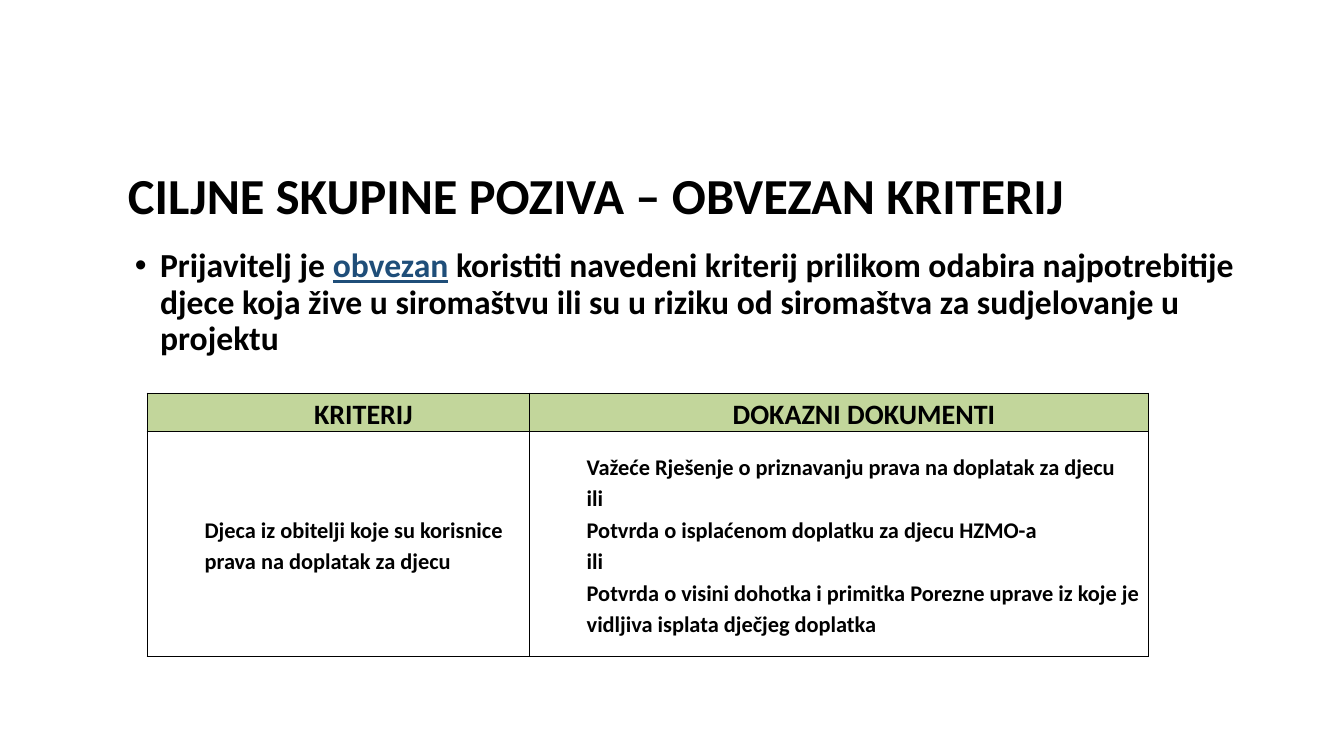
from dataclasses import dataclass

from lxml.etree import SubElement
from pptx import Presentation
from pptx.dml.color import RGBColor
from pptx.enum.shapes import MSO_SHAPE
from pptx.enum.text import MSO_ANCHOR, PP_ALIGN
from pptx.oxml.ns import qn
from pptx.util import Inches, Pt

BLACK = RGBColor(0x00, 0x00, 0x00)
WHITE = RGBColor(0xFF, 0xFF, 0xFF)
BLUE = RGBColor(0x1F, 0x4E, 0x79)
GREEN = RGBColor(0xC2, 0xD6, 0x9B)
FONT = "Calibri"


@dataclass
class Run:
    text: str
    color: RGBColor = BLACK
    underline: bool = False


@dataclass
class Row:
    height: float
    cells: list[list[str]]
    size: float
    align: PP_ALIGN
    anchor: MSO_ANCHOR
    fill: RGBColor | None = None


TITLE = "CILJNE SKUPINE POZIVA – OBVEZAN KRITERIJ "
REQUIREMENT = [
    Run("Prijavitelj je "),
    Run("obvezan", BLUE, True),
    Run(" koristiti navedeni kriterij prilikom odabira najpotrebitije djece "
        "koja žive u siromaštvu ili su u riziku od siromaštva za sudjelovanje u projektu"),
]
COLUMN_WIDTHS = [3.79, 6.14]
ROWS = [
    Row(0.38, [["KRITERIJ"], ["DOKAZNI DOKUMENTI"]],
        20, PP_ALIGN.CENTER, MSO_ANCHOR.TOP, GREEN),
    Row(2.23, [
        ["Djeca iz obitelji koje su korisnice prava na doplatak za djecu"],
        ["Važeće Rješenje o priznavanju prava na doplatak za djecu",
         "ili",
         "Potvrda o isplaćenom doplatku za djecu HZMO-a",
         "ili",
         "Potvrda o visini dohotka i primitka Porezne uprave iz koje je "
         "vidljiva isplata dječjeg doplatka"],
    ], 16, PP_ALIGN.LEFT, MSO_ANCHOR.MIDDLE),
]


def write_text(text_frame, paragraphs: list[list[Run]], *, size: float,
               align: PP_ALIGN = PP_ALIGN.LEFT, line_spacing: float = 0.9,
               margin: float = 0, indent: float = 0, bullet: str = "") -> None:
    text_frame.word_wrap = True
    for index, runs in enumerate(paragraphs):
        paragraph = text_frame.paragraphs[0] if index == 0 else text_frame.add_paragraph()
        paragraph.alignment = align
        paragraph.line_spacing = line_spacing
        properties = paragraph._p.get_or_add_pPr()
        properties.set("marL", str(Inches(margin)))
        properties.set("indent", str(Inches(indent)))
        if bullet:
            SubElement(properties, qn("a:buFont"), typeface="Arial")
            SubElement(properties, qn("a:buChar"), char=bullet)
        for item in runs:
            run = paragraph.add_run()
            run.text = item.text
            run.font.name = FONT
            run.font.size = Pt(size)
            run.font.bold = True
            run.font.underline = item.underline
            run.font.color.rgb = item.color


def add_title(slide) -> None:
    box = slide.shapes.add_textbox(Inches(0.22), Inches(0.97), Inches(11.5), Inches(1.45))
    box.text_frame.vertical_anchor = MSO_ANCHOR.BOTTOM
    box.text_frame.margin_bottom = Inches(0.18)
    write_text(box.text_frame, [[Run(TITLE)]], size=36, align=PP_ALIGN.CENTER)


def add_borders(cell) -> None:
    properties = cell._tc.get_or_add_tcPr()
    for side in ("lnL", "lnR", "lnT", "lnB"):
        line = SubElement(properties, qn(f"a:{side}"), w=str(Pt(1)))
        fill = SubElement(line, qn("a:solidFill"))
        SubElement(fill, qn("a:srgbClr"), val=str(BLACK))


def add_criteria_table(slide) -> None:
    table = slide.shapes.add_table(
        len(ROWS), len(COLUMN_WIDTHS), Inches(1.46), Inches(3.9),
        Inches(sum(COLUMN_WIDTHS)), Inches(sum(row.height for row in ROWS))).table
    for column, width in zip(table.columns, COLUMN_WIDTHS):
        column.width = Inches(width)
    for row_index, row in enumerate(ROWS):
        table.rows[row_index].height = Inches(row.height)
        for column_index, texts in enumerate(row.cells):
            cell = table.cell(row_index, column_index)
            cell.margin_left = cell.margin_right = Inches(0.07)
            cell.margin_top = cell.margin_bottom = 0
            cell.vertical_anchor = row.anchor
            add_borders(cell)
            if row.fill is None:
                cell.fill.background()
            else:
                cell.fill.solid()
                cell.fill.fore_color.rgb = row.fill
            write_text(cell.text_frame, [[Run(text)] for text in texts], size=row.size,
                       align=row.align, line_spacing=1.15, margin=0.5)


def add_requirement(slide) -> None:
    shape = slide.shapes.add_shape(
        MSO_SHAPE.RECTANGLE, Inches(1.24), Inches(2.42), Inches(11.5), Inches(1.25))
    shape.shadow.inherit = False
    shape.fill.solid()
    shape.fill.fore_color.rgb = WHITE
    shape.line.fill.background()
    shape.text_frame.vertical_anchor = MSO_ANCHOR.TOP
    write_text(shape.text_frame, [REQUIREMENT], size=24,
               margin=0.25, indent=-0.25, bullet="•")


def main() -> None:
    presentation = Presentation()
    presentation.slide_width = Inches(13.33)
    presentation.slide_height = Inches(7.5)
    slide = presentation.slides.add_slide(presentation.slide_layouts[6])
    add_title(slide)
    add_criteria_table(slide)
    add_requirement(slide)
    presentation.save("out.pptx")


if __name__ == "__main__":
    main()
